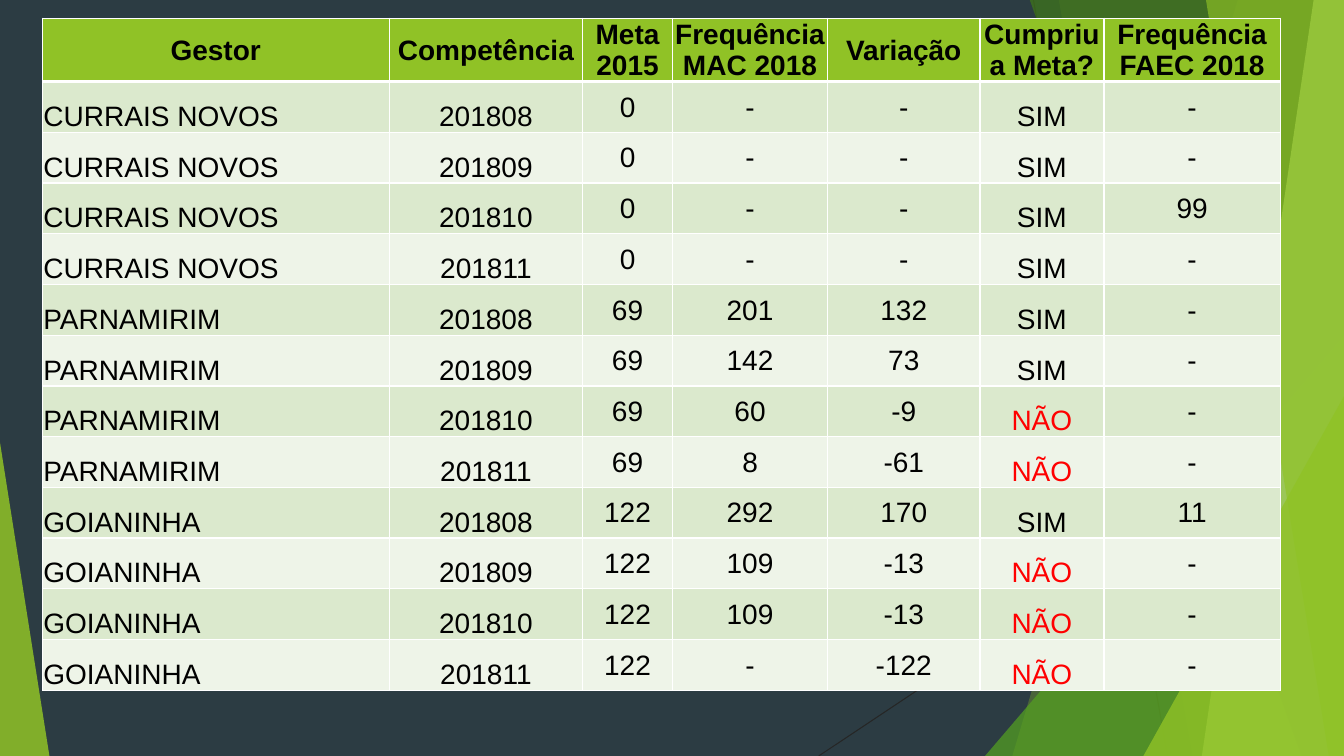
from dataclasses import dataclass
from typing import NamedTuple

from lxml.etree import SubElement
from pptx import Presentation
from pptx.dml.color import RGBColor
from pptx.enum.shapes import MSO_CONNECTOR, MSO_SHAPE
from pptx.enum.text import MSO_ANCHOR, PP_ALIGN
from pptx.oxml import parse_xml
from pptx.oxml.ns import nsdecls, qn
from pptx.util import Inches, Pt

SLATE = RGBColor(0x2C, 0x3C, 0x43)
CHARCOAL = RGBColor(0x26, 0x26, 0x26)
LIME = RGBColor(0x90, 0xC2, 0x26)
GREEN = RGBColor(0x54, 0xA0, 0x21)
FOREST = RGBColor(0x3F, 0x78, 0x19)
PALE_LIME = RGBColor(0xC0, 0xE4, 0x74)
ODD_ROW = RGBColor(0xDB, 0xE9, 0xCD)
EVEN_ROW = RGBColor(0xEE, 0xF4, 0xE8)
WHITE = RGBColor(0xFF, 0xFF, 0xFF)
BLACK = RGBColor(0, 0, 0)
RED = RGBColor(0xFF, 0, 0)

SLIDE_WIDTH, SLIDE_HEIGHT = 13.33, 7.5
BAND_TOP = -0.01
TABLE_LEFT, TABLE_TOP, TABLE_HEIGHT = 0.42, 0.18, 6.65
HEADER_HEIGHT = 0.61
COLUMN_WIDTHS = (3.44, 1.92, 0.89, 1.54, 1.51, 1.23, 1.75)
BOTTOM_ANCHORED = ("gestor", "competencia", "cumpriu")


@dataclass(frozen=True)
class Ray:
    start: tuple[float, float]
    end: tuple[float, float]


@dataclass(frozen=True)
class Band:
    top_x: float
    bottom_x: float
    color: RGBColor
    opacity: int


@dataclass(frozen=True)
class Corner:
    left: float
    top: float
    width: float
    apex: float
    color: RGBColor
    opacity: int


class Record(NamedTuple):
    gestor: str
    competencia: str
    meta: str
    mac: str
    variacao: str
    cumpriu: str
    faec: str


RAYS = (Ray((10.25, 0), (11.58, 7.5)), Ray((13.33, 4.03), (8.12, 7.5)))

FACETS = (
    Band(12.28, 10.04, LIME, 30),
    Band(10.5, 11.83, LIME, 20),
    Corner(9.77, 3.33, 3.56, 1, GREEN, 72),
    Band(10.21, 12.91, FOREST, 70),
    Band(13.03, 11.92, PALE_LIME, 70),
    Band(11.96, 13.18, LIME, 65),
    Corner(11.34, 3.93, 1.99, 1, LIME, 80),
    Corner(0, 4.39, 0.49, 0, LIME, 85),
)

HEADER = Record("Gestor", "Competência", "Meta\n2015", "Frequência MAC 2018",
                "Variação", "Cumpriu a Meta?", "Frequência FAEC 2018")

RECORDS = (
    Record("CURRAIS NOVOS", "201808", "0", "-", "-", "SIM", "-"),
    Record("CURRAIS NOVOS", "201809", "0", "-", "-", "SIM", "-"),
    Record("CURRAIS NOVOS", "201810", "0", "-", "-", "SIM", "99"),
    Record("CURRAIS NOVOS", "201811", "0", "-", "-", "SIM", "-"),
    Record("PARNAMIRIM", "201808", "69", "201", "132", "SIM", "-"),
    Record("PARNAMIRIM", "201809", "69", "142", "73", "SIM", "-"),
    Record("PARNAMIRIM", "201810", "69", "60", "-9", "NÃO", "-"),
    Record("PARNAMIRIM", "201811", "69", "8", "-61", "NÃO", "-"),
    Record("GOIANINHA", "201808", "122", "292", "170", "SIM", "11"),
    Record("GOIANINHA", "201809", "122", "109", "-13", "NÃO", "-"),
    Record("GOIANINHA", "201810", "122", "109", "-13", "NÃO", "-"),
    Record("GOIANINHA", "201811", "122", "-", "-122", "NÃO", "-"),
)


def draw_ray(slide, ray: Ray) -> None:
    line = slide.shapes.add_connector(
        MSO_CONNECTOR.STRAIGHT, *map(Inches, ray.start + ray.end))
    line.line.color.rgb = CHARCOAL
    line.line.width = Pt(0.75)
    SubElement(line.element.spPr, qn("a:effectLst"))


def build_band(slide, band: Band):
    corners = [(Inches(x), Inches(y)) for x, y in (
        (band.top_x, BAND_TOP), (SLIDE_WIDTH, BAND_TOP),
        (SLIDE_WIDTH, SLIDE_HEIGHT), (band.bottom_x, SLIDE_HEIGHT))]
    outline = slide.shapes.build_freeform(*corners[0])
    outline.add_line_segments(corners[1:], close=True)
    return outline.convert_to_shape()


def build_corner(slide, corner: Corner):
    triangle = slide.shapes.add_shape(
        MSO_SHAPE.ISOSCELES_TRIANGLE, Inches(corner.left), Inches(corner.top),
        Inches(corner.width), Inches(SLIDE_HEIGHT - corner.top))
    triangle.adjustments[0] = corner.apex
    return triangle


def draw_facet(slide, facet: Band | Corner) -> None:
    build = build_band if isinstance(facet, Band) else build_corner
    shape = build(slide, facet)
    shape.shadow.inherit = False
    shape.line.fill.background()
    shape.fill.solid()
    shape.fill.fore_color.rgb = facet.color
    color = shape.element.spPr.find(qn("a:solidFill")).find(qn("a:srgbClr"))
    SubElement(color, qn("a:alpha")).set("val", str(facet.opacity * 1000))


def set_borders(cell, *, bottom: float = 1) -> None:
    properties = cell._tc.get_or_add_tcPr()
    widths = {"lnL": 1, "lnR": 1, "lnT": 1, "lnB": bottom}
    for position, (side, width) in enumerate(widths.items()):
        properties.insert(position, parse_xml(
            f'<a:{side} {nsdecls("a")} w="{Pt(width)}"><a:solidFill>'
            f'<a:srgbClr val="{WHITE}"/></a:solidFill></a:{side}>'))


def write_cell(cell, text: str, *, fill: RGBColor, color: RGBColor = BLACK,
               bold: bool = False, align: PP_ALIGN = PP_ALIGN.CENTER,
               anchor: MSO_ANCHOR = MSO_ANCHOR.MIDDLE) -> None:
    cell.margin_left = cell.margin_right = cell.margin_top = Inches(0.01)
    cell.margin_bottom = 0
    cell.vertical_anchor = anchor
    cell.fill.solid()
    cell.fill.fore_color.rgb = fill
    cell.text = text
    for paragraph in cell.text_frame.paragraphs:
        paragraph.alignment = align
        for run in paragraph.runs:
            run.font.name = "Arial"
            run.font.size = Pt(20)
            run.font.bold = bold
            run.font.color.rgb = color


def draw_results(slide) -> None:
    row_height = (TABLE_HEIGHT - HEADER_HEIGHT) / len(RECORDS)
    results = slide.shapes.add_table(
        len(RECORDS) + 1, len(COLUMN_WIDTHS), Inches(TABLE_LEFT), Inches(TABLE_TOP),
        Inches(sum(COLUMN_WIDTHS)), Inches(TABLE_HEIGHT)).table
    results.horz_banding = False
    for column, width in zip(results.columns, COLUMN_WIDTHS):
        column.width = Inches(width)
    for index, row in enumerate(results.rows):
        row.height = Inches(row_height if index else HEADER_HEIGHT)

    for cell, title in zip(results.rows[0].cells, HEADER):
        write_cell(cell, title, fill=LIME, bold=True)
        set_borders(cell, bottom=3)
    for index, record in enumerate(RECORDS, start=1):
        for cell, field, value in zip(results.rows[index].cells, Record._fields, record):
            write_cell(
                cell, value,
                fill=ODD_ROW if index % 2 else EVEN_ROW,
                color=RED if value == "NÃO" else BLACK,
                align=PP_ALIGN.LEFT if field == "gestor" else PP_ALIGN.CENTER,
                anchor=MSO_ANCHOR.BOTTOM if field in BOTTOM_ANCHORED else MSO_ANCHOR.MIDDLE)
            set_borders(cell)
    for cell in results.rows[1].cells:
        cell._tc.tcPr.find(qn("a:lnT")).set("w", str(Pt(3)))


def main() -> None:
    deck = Presentation()
    deck.slide_width = Inches(SLIDE_WIDTH)
    deck.slide_height = Inches(SLIDE_HEIGHT)
    slide = deck.slides.add_slide(deck.slide_layouts[6])
    slide.background.fill.solid()
    slide.background.fill.fore_color.rgb = SLATE
    for ray in RAYS:
        draw_ray(slide, ray)
    for facet in FACETS:
        draw_facet(slide, facet)
    draw_results(slide)
    deck.save("out.pptx")


if __name__ == "__main__":
    main()
